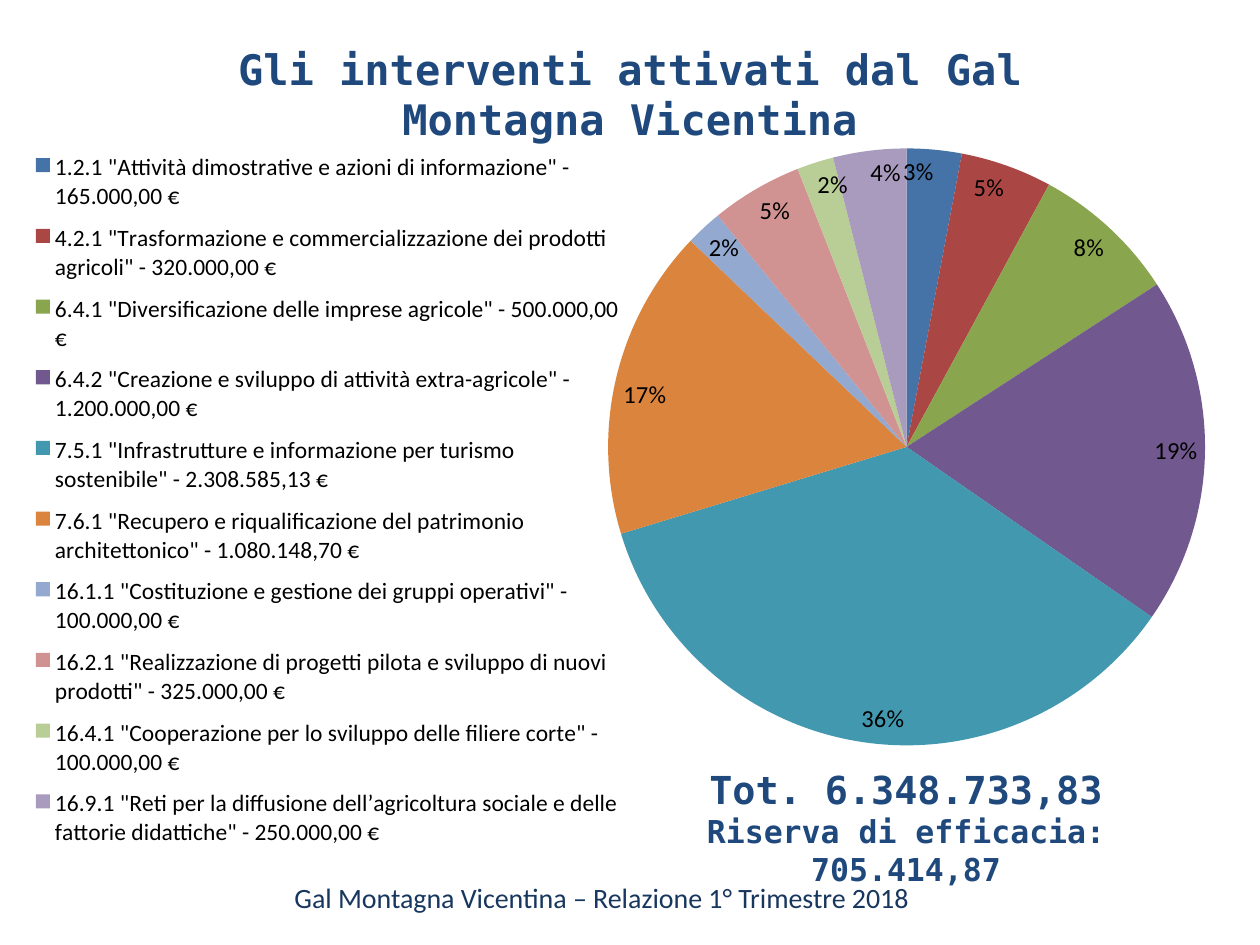
from dataclasses import dataclass

from lxml.etree import SubElement
from pptx import Presentation
from pptx.chart.data import CategoryChartData
from pptx.dml.color import RGBColor
from pptx.enum.chart import XL_CHART_TYPE as ChartType
from pptx.enum.chart import XL_LABEL_POSITION as LabelPosition
from pptx.enum.chart import XL_LEGEND_POSITION as LegendPosition
from pptx.enum.text import MSO_ANCHOR, MSO_AUTO_SIZE, PP_ALIGN
from pptx.oxml.ns import qn
from pptx.util import Emu, Pt

TITLE = "Gli interventi attivati dal Gal Montagna Vicentina"
FOOTER = "Gal Montagna Vicentina – Relazione 1° Trimestre 2018"
TOTALS = ["Tot. 6.348.733,83", "Riserva di efficacia: 705.414,87"]

# measure and budget, share of the total in percent, slice colour
MEASURES = [
    ('1.2.1 "Attività dimostrative e azioni di informazione" - 165.000,00 €', 3, "4572A7"),
    ('4.2.1 "Trasformazione e commercializzazione dei prodotti agricoli" - 320.000,00 €', 5, "AA4643"),
    ('6.4.1 "Diversificazione delle imprese agricole" - 500.000,00 €', 8, "89A54E"),
    ('6.4.2 "Creazione e sviluppo di attività extra-agricole" - 1.200.000,00 €', 19, "71588F"),
    ('7.5.1 "Infrastrutture e informazione per turismo sostenibile" - 2.308.585,13 €', 36, "4198AF"),
    ('7.6.1 "Recupero e riqualificazione del patrimonio architettonico" - 1.080.148,70 €', 17, "DB843D"),
    ('16.1.1 "Costituzione e gestione dei gruppi operativi" - 100.000,00 €', 2, "93A9CF"),
    ('16.2.1 "Realizzazione di progetti pilota e sviluppo di nuovi prodotti" - 325.000,00 €', 5, "D19392"),
    ('16.4.1 "Cooperazione per lo sviluppo delle filiere corte" - 100.000,00 €', 2, "B9CD96"),
    ('16.9.1 "Reti per la diffusione dell’agricoltura sociale e delle fattorie didattiche" - 250.000,00 €',
     4, "A99BBD"),
]

PX = 914400 // 126
TITLE_AREA = (164, 37, 932, 63)
CHART_AREA = (35, 110, 1194, 766)
FOOTER_AREA = (282, 874, 648, 47)
TOTALS_AREA = (668, 760, 476, 97)
# fractions of the chart area: left, top, width, height
PIE_LAYOUT = (0.48, 0.05, 0.5, 0.78)
LEGEND_LAYOUT = (0, 0.04, 0.49, 0.94)


@dataclass(frozen=True)
class Theme:
    heading_font: str = "DejaVu Sans Mono"
    body_font: str = "Calibri"
    heading: str = "1F497D"
    footer: str = "17375E"
    chart_text: str = "000000"
    title_size: float = 24
    total_sizes: tuple = (22, 18)
    footer_size: float = 16
    label_size: float = 14
    legend_size: float = 13.4


THEME = Theme()


def scaled(area):
    return [Emu(length * PX) for length in area]


def style_font(font, name, size, color, bold=False):
    font.name, font.size, font.bold = name, Pt(size), bold
    font.color.rgb = RGBColor.from_string(color)


def write(box, lines, sizes, name, color, bold=False, align=PP_ALIGN.CENTER, wrap=True):
    frame = box.text_frame
    frame.text = "\n".join(lines)
    frame.word_wrap = wrap
    frame.auto_size = MSO_AUTO_SIZE.SHAPE_TO_FIT_TEXT
    frame.vertical_anchor = MSO_ANCHOR.TOP
    for para, size in zip(frame.paragraphs, sizes):
        para.alignment = align
        style_font(para.font, name, size, color, bold)


def set_layout(parent, fractions, after, inner=False):
    """Place a chart part by hand, in fractions of the chart area."""
    for old in parent.findall(qn("c:layout")):
        parent.remove(old)
    layout = SubElement(parent, qn("c:layout"))
    manual = SubElement(layout, qn("c:manualLayout"))
    settings = [("layoutTarget", "inner")] if inner else []
    settings += [("xMode", "edge"), ("yMode", "edge")]
    settings += zip("xywh", fractions)
    for tag, value in settings:
        SubElement(manual, qn(f"c:{tag}")).set("val", str(value))
    if after is None:
        parent.insert(0, layout)
    else:
        after.addnext(layout)


def add_pie(page):
    data = CategoryChartData()
    data.categories = [name for name, _, _ in MEASURES]
    data.add_series("Series 1", [share for _, share, _ in MEASURES])
    chart = page.shapes.add_chart(ChartType.PIE, *scaled(CHART_AREA), data).chart
    chart.has_title = False
    style_font(chart.font, THEME.body_font, 10, THEME.chart_text)

    plot = chart.plots[0]
    plot.vary_by_categories = True
    for index, (_, _, color) in enumerate(MEASURES):
        fill = plot.series[0].points[index].format.fill
        fill.solid()
        fill.fore_color.rgb = RGBColor.from_string(color)

    plot.has_data_labels = True
    labels = plot.data_labels
    labels.show_percentage, labels.show_value = True, False
    labels.number_format, labels.number_format_is_linked = "0%", False
    labels.position = LabelPosition.INSIDE_END
    style_font(labels.font, THEME.body_font, THEME.label_size, THEME.chart_text)

    chart.has_legend = True
    legend = chart.legend
    legend.position = LegendPosition.RIGHT
    legend.include_in_layout = False
    style_font(legend.font, THEME.body_font, THEME.legend_size, THEME.chart_text)

    chart_xml = chart.element.find(qn("c:chart"))
    legend_xml = chart_xml.find(qn("c:legend"))
    set_layout(chart_xml.find(qn("c:plotArea")), PIE_LAYOUT, None, inner=True)
    set_layout(legend_xml, LEGEND_LAYOUT, legend_xml.find(qn("c:legendPos")))


def main():
    deck = Presentation()
    deck.slide_width, deck.slide_height = scaled((1260, 945))
    page = deck.slides.add_slide(deck.slide_layouts[5])

    title = page.shapes.title
    title.left, title.top, title.width, title.height = scaled(TITLE_AREA)
    write(title, [TITLE], [THEME.title_size], THEME.heading_font, THEME.heading, bold=True)

    add_pie(page)

    footer = page.shapes.add_textbox(*scaled(FOOTER_AREA))
    write(footer, [FOOTER], [THEME.footer_size], THEME.body_font, THEME.footer,
          align=PP_ALIGN.LEFT, wrap=False)
    totals = page.shapes.add_textbox(*scaled(TOTALS_AREA))
    write(totals, TOTALS, THEME.total_sizes, THEME.heading_font, THEME.heading, bold=True)

    deck.save("out.pptx")


if __name__ == "__main__":
    main()
